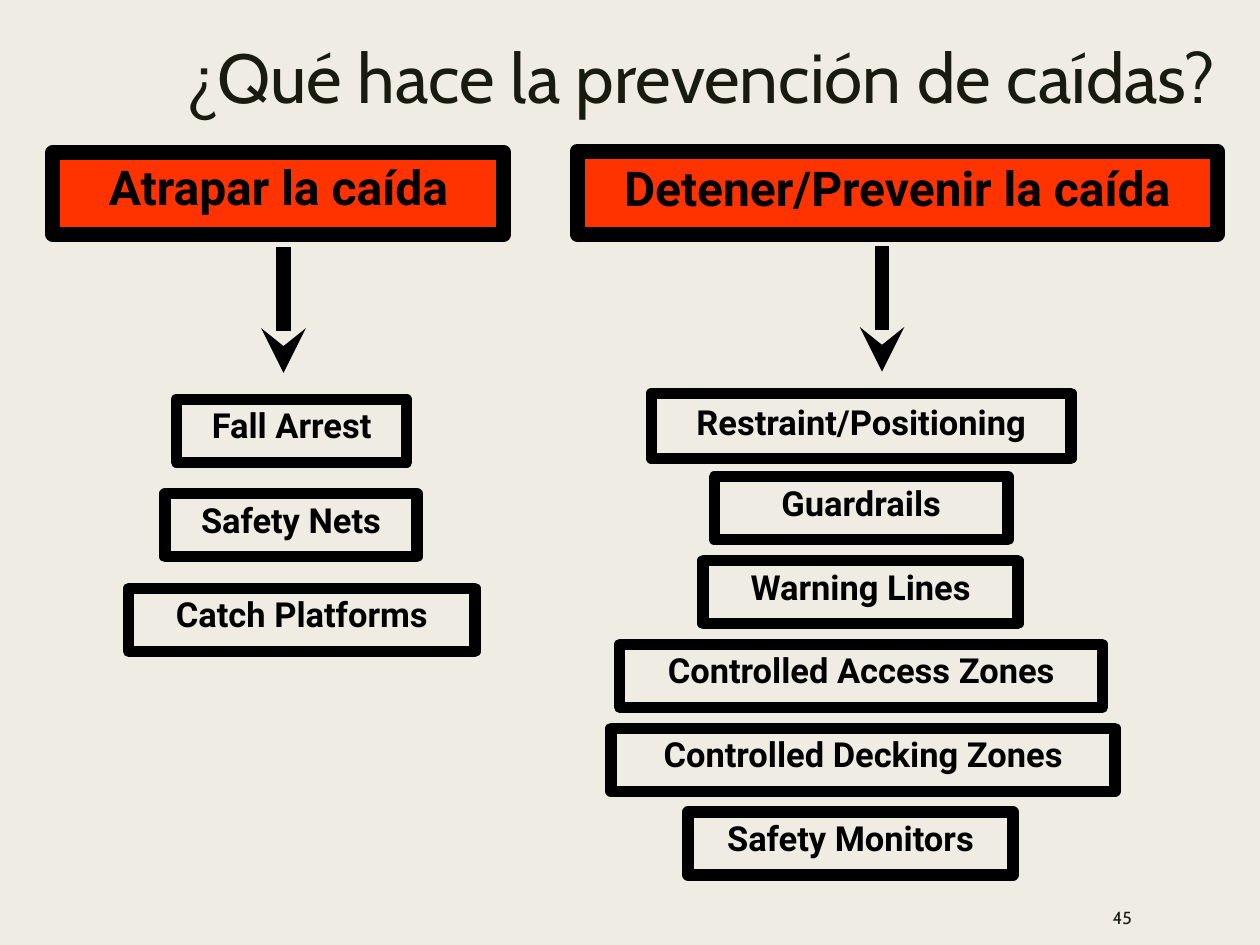
from dataclasses import dataclass

from lxml import etree
from pptx import Presentation
from pptx.dml.color import RGBColor
from pptx.enum.shapes import MSO_CONNECTOR, MSO_SHAPE
from pptx.enum.text import MSO_ANCHOR, PP_ALIGN
from pptx.oxml.ns import qn
from pptx.util import Inches, Pt

RECTANGLE = MSO_SHAPE.RECTANGLE
STRAIGHT = MSO_CONNECTOR.STRAIGHT
TOP, MIDDLE = MSO_ANCHOR.TOP, MSO_ANCHOR.MIDDLE
LEFT, CENTER, RIGHT = PP_ALIGN.LEFT, PP_ALIGN.CENTER, PP_ALIGN.RIGHT

BACKGROUND, INK, BLACK, ORANGE = "EFEDE3", "191B0E", "000000", "FF3300"
HEADING_FONT, BOX_FONT = "Cabin", "Roboto"
HEADING_LINE, METHOD_LINE = 8.53, 6.4
WIDE_INSETS, NARROW_INSETS = (0.1, 0.06), (0.07, 0.04)


@dataclass
class Box:
    label: str
    left: float
    width: float
    height: float = 0.5
    insets: tuple[float, float] = NARROW_INSETS


@dataclass
class Column:
    heading: Box
    heading_top: float
    arrow_x: float
    arrow_top: float
    first_top: float
    pitch: float
    methods: list[Box]


COLUMNS = [
    Column(
        Box("Detener/Prevenir la caída", 4.58, 5.08, 0.66, WIDE_INSETS),
        heading_top=1.2, arrow_x=7, arrow_top=1.95, first_top=3.12, pitch=0.665,
        methods=[
            Box("Restraint/Positioning", 5.17, 3.33, 0.52, WIDE_INSETS),
            Box("Guardrails", 5.67, 2.33),
            Box("Warning Lines", 5.58, 2.5),
            Box("Controlled Access Zones", 4.92, 3.83),
            Box("Controlled Decking Zones", 4.85, 4),
            Box("Safety Monitors", 5.46, 2.58),
        ],
    ),
    Column(
        Box("Atrapar la caída", 0.42, 3.58, 0.65),
        heading_top=1.21, arrow_x=2.25, arrow_top=1.96, first_top=3.17, pitch=0.75,
        methods=[
            Box("Fall Arrest", 1.4, 1.83),
            Box("Safety Nets", 1.31, 2),
            Box("Catch Platforms", 1.02, 2.75),
        ],
    ),
]


def color(hex_code: str) -> RGBColor:
    return RGBColor.from_string(hex_code)


def write(shape, text: str, size: float, font: str, ink: str, align, anchor,
          insets: tuple[float, float] = WIDE_INSETS, bold: bool = False):
    """Fill a shape with one formatted paragraph and return that paragraph."""
    frame = shape.text_frame
    frame.text = text
    frame.word_wrap = True
    frame.vertical_anchor = anchor
    frame.margin_left = frame.margin_right = Inches(insets[0])
    frame.margin_top = frame.margin_bottom = Inches(insets[1])
    paragraph = frame.paragraphs[0]
    paragraph.alignment = align
    run_font = paragraph.runs[0].font
    run_font.name = font
    run_font.size = Pt(size)
    run_font.bold = bold
    run_font.color.rgb = color(ink)
    return paragraph


def draw_box(slide, box: Box, top: float, text_size: float,
             line_width: float, fill: str | None = None) -> None:
    shape = slide.shapes.add_shape(RECTANGLE, Inches(box.left), Inches(top),
                                   Inches(box.width), Inches(box.height))
    shape.shadow.inherit = False
    if fill:
        shape.fill.solid()
        shape.fill.fore_color.rgb = color(fill)
    else:
        shape.fill.background()
    shape.line.color.rgb = color(BLACK)
    shape.line.width = Pt(line_width)
    label = write(shape, box.label, text_size, BOX_FONT, BLACK, CENTER, TOP,
                  box.insets, bold=True)
    label.space_before = Pt(7)


def draw_down_arrow(slide, x: float, top: float, length: float = 1) -> None:
    arrow = slide.shapes.add_connector(STRAIGHT, Inches(x), Inches(top),
                                       Inches(x), Inches(top + length))
    arrow.line.color.rgb = color(BLACK)
    arrow.line.width = Pt(HEADING_LINE)
    etree.SubElement(arrow.line._get_or_add_ln(), qn("a:tailEnd"), type="stealth")
    etree.SubElement(arrow._element.spPr, qn("a:effectLst"))


def draw_column(slide, column: Column) -> None:
    draw_box(slide, column.heading, column.heading_top, 27.4, HEADING_LINE, ORANGE)
    draw_down_arrow(slide, column.arrow_x, column.arrow_top)
    for row, method in enumerate(column.methods):
        draw_box(slide, method, column.first_top + row * column.pitch,
                 19.7, METHOD_LINE)


def main() -> None:
    deck = Presentation()
    deck.slide_width, deck.slide_height = Inches(10), Inches(7.5)
    slide = deck.slides.add_slide(deck.slide_layouts[5])
    slide.background.fill.solid()
    slide.background.fill.fore_color.rgb = color(BACKGROUND)

    title = slide.shapes.title
    title.left, title.top = Inches(1.38), Inches(0.22)
    title.width, title.height = Inches(8.62), Inches(0.85)
    question = write(title, "¿Qué hace la prevención de caídas?", 39.6,
                     HEADING_FONT, INK, LEFT, MIDDLE)
    question.line_spacing = 0.89

    for column in COLUMNS:
        draw_column(slide, column)

    page_number = slide.shapes.add_textbox(Inches(7.77), Inches(7.06),
                                           Inches(1.31), Inches(0.44))
    write(page_number, "45", 10, HEADING_FONT, INK, RIGHT, MIDDLE)
    deck.save("out.pptx")


if __name__ == "__main__":
    main()
